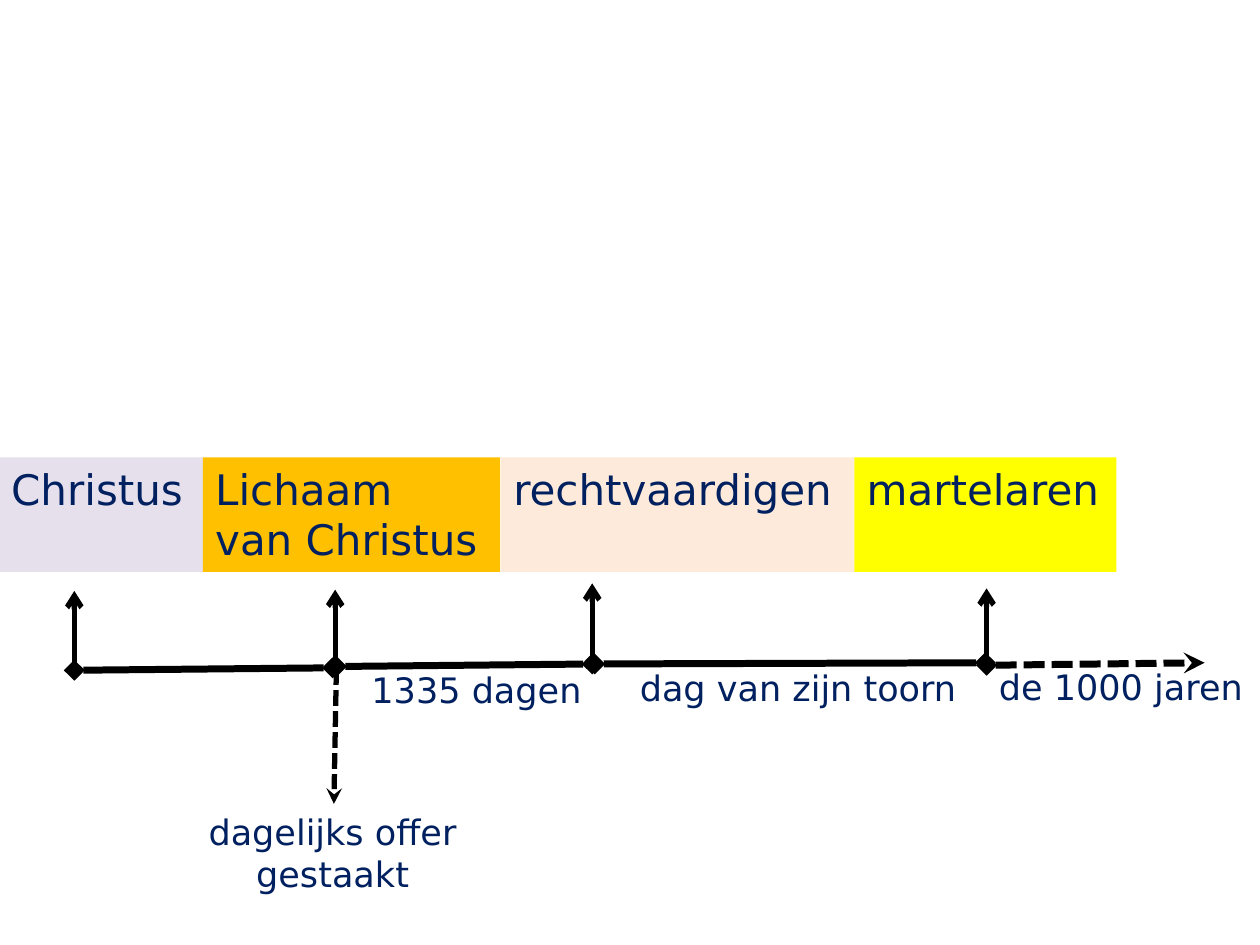
"""Build a timeline slide with four groups above their moments."""
import dataclasses
import typing

import pptx
import pptx.dml.color
import pptx.enum.dml
import pptx.enum.shapes
import pptx.enum.text
import pptx.oxml
import pptx.oxml.ns
import pptx.util

COLUMNS, ROWS = 100, 75
SLIDE_WIDTH = pptx.util.Inches(10)
SLIDE_HEIGHT = pptx.util.Inches(7.5)
FONT = "DejaVu Sans"
NAVY, BLACK = "002060", "000000"
LEFT = pptx.enum.text.PP_ALIGN.LEFT
CENTER = pptx.enum.text.PP_ALIGN.CENTER
BAND_TOP, BAND_HEIGHT = 36.3, 9.1
LABEL_HEIGHT = 4.4
Point = typing.Tuple[float, float]


@dataclasses.dataclass(frozen=True)
class Label:
    """Text in a box placed in columns and rows."""
    text: str
    left: float
    top: float
    width: float
    height: float
    size: int = 20
    align: typing.Any = LEFT
    fill: typing.Optional[str] = None


@dataclasses.dataclass(frozen=True)
class Stroke:
    """A line between two grid points with optional ends."""
    start: Point
    end: Point
    width: int
    tail: str
    head: typing.Optional[str] = None
    dashed: bool = False


def group(text: str, left: float, right: float, fill: str) -> Label:
    """Return one coloured group of the band."""
    return Label(text, left, BAND_TOP, right - left, BAND_HEIGHT, 24, LEFT, fill)


def up_arrow(column: float, row: float) -> Stroke:
    """Return an arrow that rises from the timeline to the band."""
    return Stroke((column, row), (column, row - 6.3), 3, "arrow")


def period(start: Point, end: Point) -> Stroke:
    """Return a timeline part between two diamonds."""
    return Stroke(start, end, 4, "diamond", "diamond")


LABELS = [
    group("Christus", -0.1, 16.1, "E6E0EC"),
    group("Lichaam\nvan Christus", 16.1, 39.7, "FFC000"),
    group("rechtvaardigen", 39.75, 67.8, "FDEADA"),
    group("martelaren", 67.8, 88.6, "FFFF00"),
    Label("dagelijks offer\vgestaakt", 11.5, 63.8, 29.8, 7.7, align=CENTER),
    Label("1335 dagen", 28.5, 52.6, 25.6, LABEL_HEIGHT),
    Label("dag van zijn toorn", 47, 52.4, 32.7, LABEL_HEIGHT, align=CENTER),
    Label("de 1000 jaren", 78.3, 52.3, 23.4, LABEL_HEIGHT),
]

STROKES = [
    period((5.9, 53.2), (26.4, 53)),
    period((26.7, 52.9), (47, 52.7)),
    period((47.2, 52.7), (78.2, 52.6)),
    Stroke((78.3, 52.8), (95.6, 52.6), 4, "stealth", "diamond", True),
    Stroke((26.7, 53.1), (26.5, 63.8), 3, "stealth", dashed=True),
    up_arrow(5.9, 53.2),
    up_arrow(26.6, 53.1),
    up_arrow(47, 52.6),
    up_arrow(78.3, 53),
]


def color(value: str) -> pptx.dml.color.RGBColor:
    """Turn a hex string into a colour."""
    return pptx.dml.color.RGBColor.from_string(value)


def across(columns: float) -> int:
    """Turn columns into a length."""
    return round(SLIDE_WIDTH * columns / COLUMNS)


def down(rows: float) -> int:
    """Turn rows into a length."""
    return round(SLIDE_HEIGHT * rows / ROWS)


def apply_format(target: typing.Any, values: typing.Dict[str, typing.Any]) -> None:
    """Set each named attribute on the target."""
    for name, value in values.items():
        setattr(target, name, value)


def draw_label(slide: typing.Any, label: Label) -> None:
    """Draw a text box with an optional fill."""
    shape = slide.shapes.add_textbox(
        across(label.left), down(label.top), across(label.width), down(label.height))
    if label.fill:
        shape.fill.solid()
        shape.fill.fore_color.rgb = color(label.fill)
    frame = shape.text_frame
    frame.text = label.text
    apply_format(frame, {
        "word_wrap": True,
        "auto_size": pptx.enum.text.MSO_AUTO_SIZE.SHAPE_TO_FIT_TEXT,
        "vertical_anchor": pptx.enum.text.MSO_ANCHOR.TOP,
    })
    for paragraph in frame.paragraphs:
        paragraph.alignment = label.align
        for run in paragraph.runs:
            apply_format(run.font, {"name": FONT, "size": pptx.util.Pt(label.size)})
            run.font.color.rgb = color(NAVY)


def draw_stroke(slide: typing.Any, stroke: Stroke) -> None:
    """Draw a connector with its dash and ends."""
    (start_column, start_row), (end_column, end_row) = stroke.start, stroke.end
    connector = slide.shapes.add_connector(
        pptx.enum.shapes.MSO_CONNECTOR.STRAIGHT,
        across(start_column), down(start_row), across(end_column), down(end_row))
    line_format = {"width": pptx.util.Pt(stroke.width)}
    if stroke.dashed:
        line_format["dash_style"] = pptx.enum.dml.MSO_LINE.SQUARE_DOT
    connector.line.color.rgb = color(BLACK)
    apply_format(connector.line, line_format)
    properties = connector._element.spPr
    outline = properties.find(pptx.oxml.ns.qn("a:ln"))
    for tag, kind in (("headEnd", stroke.head), ("tailEnd", stroke.tail)):
        if kind:
            outline.append(pptx.oxml.parse_xml(
                f'<a:{tag} {pptx.oxml.ns.nsdecls("a")} type="{kind}"/>'))
    properties.append(pptx.oxml.parse_xml(
        f'<a:effectLst {pptx.oxml.ns.nsdecls("a")}/>'))


def main() -> None:
    """Create the presentation and save it."""
    presentation = pptx.Presentation()
    apply_format(presentation, {"slide_width": SLIDE_WIDTH, "slide_height": SLIDE_HEIGHT})
    slide = presentation.slides.add_slide(presentation.slide_layouts[6])
    for label in LABELS:
        draw_label(slide, label)
    for stroke in STROKES:
        draw_stroke(slide, stroke)
    presentation.save("out.pptx")


if __name__ == "__main__":
    main()
